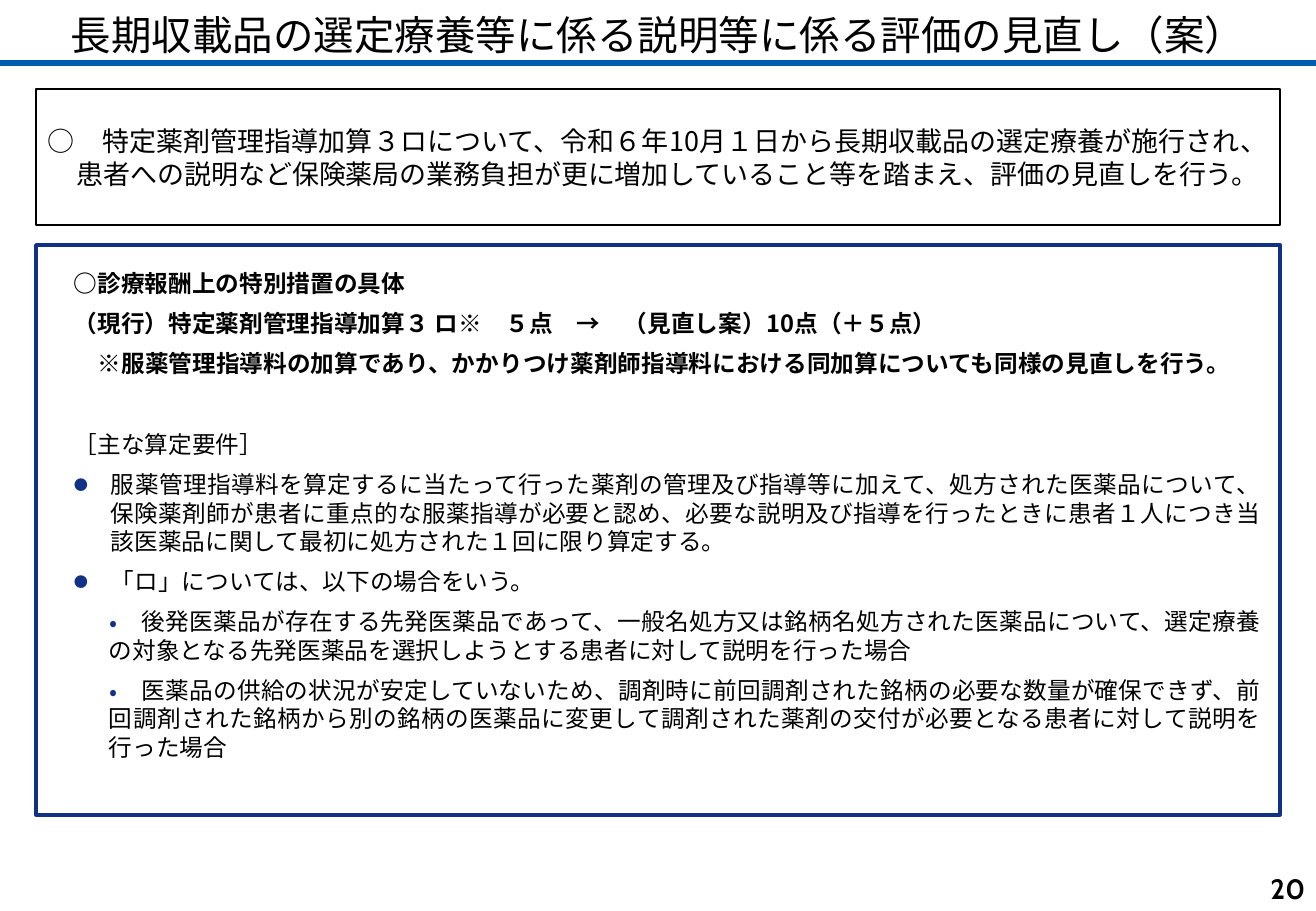
from lxml import etree
from pptx import Presentation
from pptx import util as u
from pptx.dml.color import RGBColor
from pptx.enum import lang, shapes, text
from pptx.oxml.ns import qn

W, H = 1316, 911
SCALE = 914400 / 121.5
CJK = "Noto Sans CJK JP"
C = {"text": "000000", "rule": "005CAF", "frame": "103185"}
AL, ANC = text.PP_ALIGN, text.MSO_ANCHOR

TITLE = "長期収載品の選定療養等に係る説明等に係る評価の見直し（案）"
SUMMARY = "○　特定薬剤管理指導加算３ロについて、令和６年10月１日から長期収載品の選定療養が施行され、患者への説明など保険薬局の業務負担が更に増加していること等を踏まえ、評価の見直しを行う。"
HEAD = {"bold": True}
ITEM = {"bullet": "●", "pct": 60, "left": 37, "first": -37}
CASE = {"bullet": "•", "pct": 100, "left": 35, "first": 1}
DETAILS = [
    ("○診療報酬上の特別措置の具体", HEAD),
    ("（現行）特定薬剤管理指導加算３ ロ※　５点　→　（見直し案）10点（＋５点）", HEAD),
    ("※服薬管理指導料の加算であり、かかりつけ薬剤師指導料における同加算についても同様の見直しを行う。",
     {"bold": True, "first": 24}),
    ("［主な算定要件］", {"before": 24}),
    ("服薬管理指導料を算定するに当たって行った薬剤の管理及び指導等に加えて、処方された医薬品について、保険薬剤師が患者に重点的な服薬指導が必要と認め、必要な説明及び指導を行ったときに患者１人につき当該医薬品に関して最初に処方された１回に限り算定する。", ITEM),
    ("「ロ」については、以下の場合をいう。", ITEM),
    ("　後発医薬品が存在する先発医薬品であって、一般名処方又は銘柄名処方された医薬品について、選定療養の対象となる先発医薬品を選択しようとする患者に対して説明を行った場合", CASE),
    ("　医薬品の供給の状況が安定していないため、調剤時に前回調剤された銘柄の必要な数量が確保できず、前回調剤された銘柄から別の銘柄の医薬品に変更して調剤された薬剤の交付が必要となる患者に対して説明を行った場合", CASE),
]


def px(n):
    return u.Emu(round(n * SCALE))


def rgb(name):
    return RGBColor.from_string(C[name])


def set_all(obj, values):
    for name, value in values.items():
        setattr(obj, name, value)


def sub(parent, tag, **attrs):
    return etree.SubElement(parent, qn(tag), attrs)


def set_frame(sp, insets, anchor):
    tf = sp.text_frame
    sides = ("margin_left", "margin_top", "margin_right", "margin_bottom")
    set_all(tf, dict(zip(sides, map(px, insets))))
    set_all(tf, {"word_wrap": True, "auto_size": text.MSO_AUTO_SIZE.NONE,
                 "vertical_anchor": anchor})
    return tf


def add_bullet(pPr, char, pct):
    clr = sub(pPr, "a:buClr")
    sub(clr, "a:srgbClr", val=C["frame"])
    sub(pPr, "a:buSzPct", val=str(pct * 1000))
    sub(pPr, "a:buFont", typeface=CJK)
    sub(pPr, "a:buChar", char=char)


def write(p, content, size, align, font=CJK, bold=False, left=0, first=0,
          before=0, after=0, bullet=None, pct=100):
    set_all(p, {"alignment": align, "line_spacing": u.Pt(size * 1.2),
                "space_before": u.Pt(before), "space_after": u.Pt(after)})
    pPr = p._p.get_or_add_pPr()
    pPr.set("marL", str(px(left)))
    pPr.set("indent", str(px(first)))
    if bullet:
        add_bullet(pPr, bullet, pct)
    r = p.add_run()
    r.text = content
    set_all(r.font, {"name": font, "size": u.Pt(size), "bold": bold,
                     "language_id": lang.MSO_LANGUAGE_ID.JAPANESE})
    r.font.color.rgb = rgb("text")
    sub(r._r.get_or_add_rPr(), "a:ea", typeface=font)


def add_label(s, box, insets, content, size, align, **fmt):
    sp = s.shapes.add_textbox(*map(px, box))
    tf = set_frame(sp, insets, ANC.MIDDLE)
    write(tf.paragraphs[0], content, size, align, **fmt)


def add_panel(s, box, color, width, insets, anchor):
    sp = s.shapes.add_shape(shapes.MSO_SHAPE.RECTANGLE, *map(px, box))
    sp.shadow.inherit = False
    sp.fill.background()
    sp.line.color.rgb = rgb(color)
    sp.line.width = u.Pt(width)
    return set_frame(sp, insets, anchor)


def add_header(s, box):
    x, y, w, h = box
    add_label(s, box, (12, 10, 12, 5), TITLE, 24, AL.CENTER)
    rule = s.shapes.add_connector(shapes.MSO_CONNECTOR.STRAIGHT,
                                  px(x), px(y + h), px(x + w), px(y + h))
    rule.line.color.rgb = rgb("rule")
    rule.line.width = u.Pt(4)
    sub(rule._element.spPr, "a:effectLst")


def add_summary(s, box):
    tf = add_panel(s, box, "text", 0.75, (12, 1, 12, 1), ANC.MIDDLE)
    write(tf.paragraphs[0], SUMMARY, 16, AL.JUSTIFY, left=29, first=-29)


def add_details(s, box):
    tf = add_panel(s, box, "frame", 2, (38, 24, 19, 24), ANC.TOP)
    for i, (content, fmt) in enumerate(DETAILS):
        p = tf.add_paragraph() if i else tf.paragraphs[0]
        write(p, content, 14, AL.JUSTIFY, after=7, **fmt)


def add_page_number(s, box):
    add_label(s, box, (11, 6, 11, 6), "20", 16.6, AL.RIGHT, font="Cabin", bold=True)


def main():
    prs = Presentation()
    set_all(prs, {"slide_width": px(W), "slide_height": px(H)})
    s = prs.slides.add_slide(prs.slide_layouts[6])
    add_header(s, (0, 0, W, 63))
    add_summary(s, (36, 89, W - 72, 136))
    add_details(s, (36, 245, W - 72, 570))
    add_page_number(s, (W - 283, H - 45, 283, 45))
    prs.save("out.pptx")


if __name__ == "__main__":
    main()
